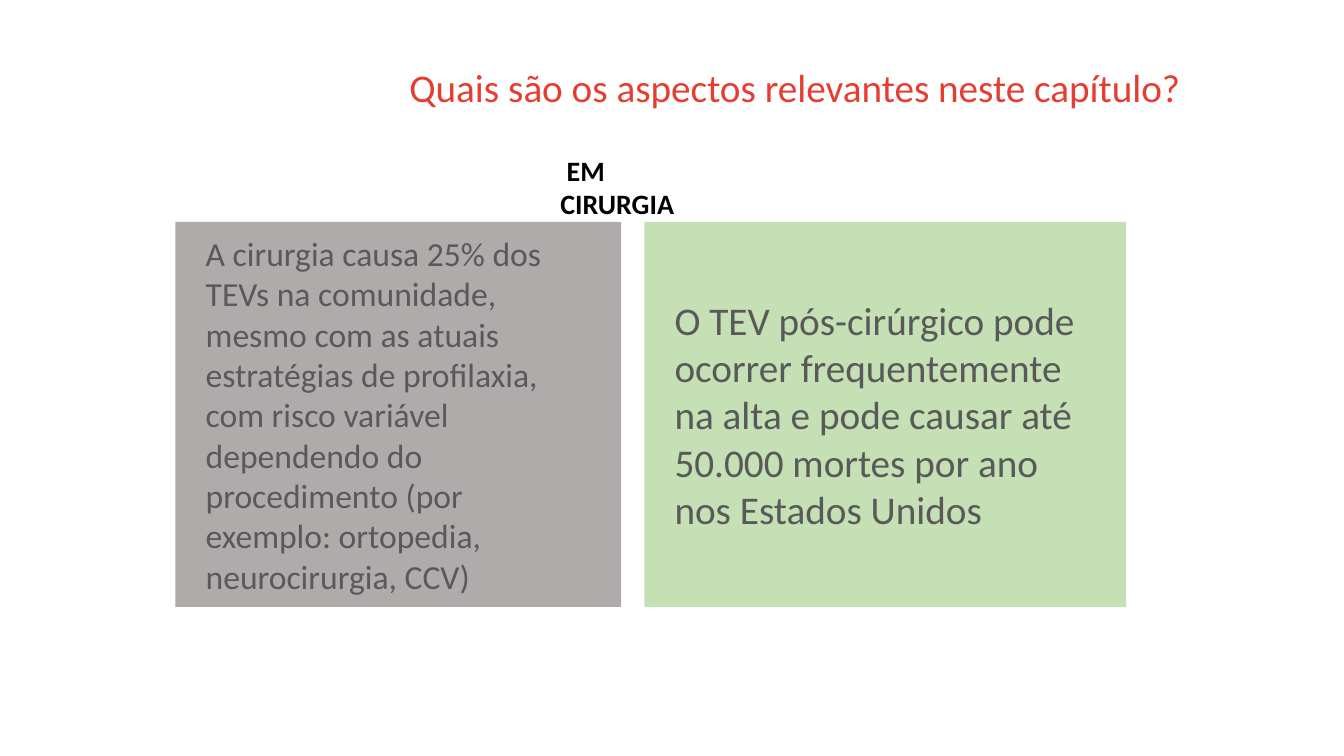
from pptx import Presentation
from pptx.dml.color import RGBColor
from pptx.enum.shapes import MSO_SHAPE
from pptx.enum.text import MSO_ANCHOR, MSO_AUTO_SIZE, PP_ALIGN
from pptx.util import Inches, Pt

RECTANGLE = MSO_SHAPE.RECTANGLE
TOP, MIDDLE = MSO_ANCHOR.TOP, MSO_ANCHOR.MIDDLE
LEFT = PP_ALIGN.LEFT
FIT_SHAPE, NO_FIT = MSO_AUTO_SIZE.SHAPE_TO_FIT_TEXT, MSO_AUTO_SIZE.NONE

RED = RGBColor(0xE5, 0x3E, 0x31)
GREY = RGBColor(0xAF, 0xAB, 0xAB)
GREEN = RGBColor(0xC5, 0xE0, 0xB4)
DARK_GREY = RGBColor(0x59, 0x59, 0x59)
BLACK = RGBColor(0, 0, 0)

CARD_PADDING = Inches(0.3)
CARDS_TOP, CARDS_HEIGHT = 2.2, 3.82
# left, width, fill, text size, text
CARDS = [
    (1.74, 4.42, GREY, 24,
     "A cirurgia causa 25% dos TEVs na comunidade, mesmo com as atuais "
     "estratégias de profilaxia, com risco variável dependendo do "
     "procedimento (por exemplo: ortopedia, neurocirurgia, CCV)"),
    (6.39, 4.78, GREEN, 28,
     "O TEV pós-cirúrgico pode ocorrer frequentemente na alta e pode causar "
     "até 50.000 mortes por ano nos Estados Unidos"),
]


def write_text(shape, text, size, color, anchor, bold=False):
    frame = shape.text_frame
    frame.word_wrap = True
    frame.auto_size = NO_FIT
    frame.vertical_anchor = anchor
    paragraph = frame.paragraphs[0]
    paragraph.text = text
    paragraph.alignment = LEFT
    paragraph.line_spacing = 1.0
    font = paragraph.font
    font.name, font.size, font.bold = "Calibri", Pt(size), bold
    font.color.rgb = color


def place_title(slide, left, top, width, height):
    title = slide.shapes.title
    title.left, title.top = Inches(left), Inches(top)
    title.width, title.height = Inches(width), Inches(height)
    write_text(title, "Quais são os aspectos relevantes neste capítulo?",
               28, RED, TOP)


def add_section_label(slide, left, top, width, height):
    label = slide.shapes.add_textbox(
        Inches(left), Inches(top), Inches(width), Inches(height))
    write_text(label, " EM CIRURGIA", 20, BLACK, TOP, bold=True)
    label.text_frame.auto_size = FIT_SHAPE


def add_card(group, left, top, width, height, fill, size, text):
    card = group.shapes.add_shape(
        RECTANGLE, Inches(left), Inches(top), Inches(width), Inches(height))
    card.shadow.inherit = False
    card.fill.solid()
    card.fill.fore_color.rgb = fill
    card.line.fill.background()
    write_text(card, text, size, DARK_GREY, MIDDLE)
    frame = card.text_frame
    frame.margin_left = frame.margin_right = CARD_PADDING
    frame.margin_top = frame.margin_bottom = CARD_PADDING


def main():
    presentation = Presentation()
    presentation.slide_width = Inches(13.33)
    presentation.slide_height = Inches(7.5)
    title_only = presentation.slide_layouts[5]
    slide = presentation.slides.add_slide(title_only)

    place_title(slide, 3.96, 0.58, 12, 0.78)
    card_group = slide.shapes.add_group_shape()
    for left, width, fill, size, text in CARDS:
        add_card(card_group, left, CARDS_TOP, width, CARDS_HEIGHT,
                 fill, size, text)
    add_section_label(slide, 5.46, 1.47, 1.7, 0.44)
    presentation.save("out.pptx")


if __name__ == "__main__":
    main()
